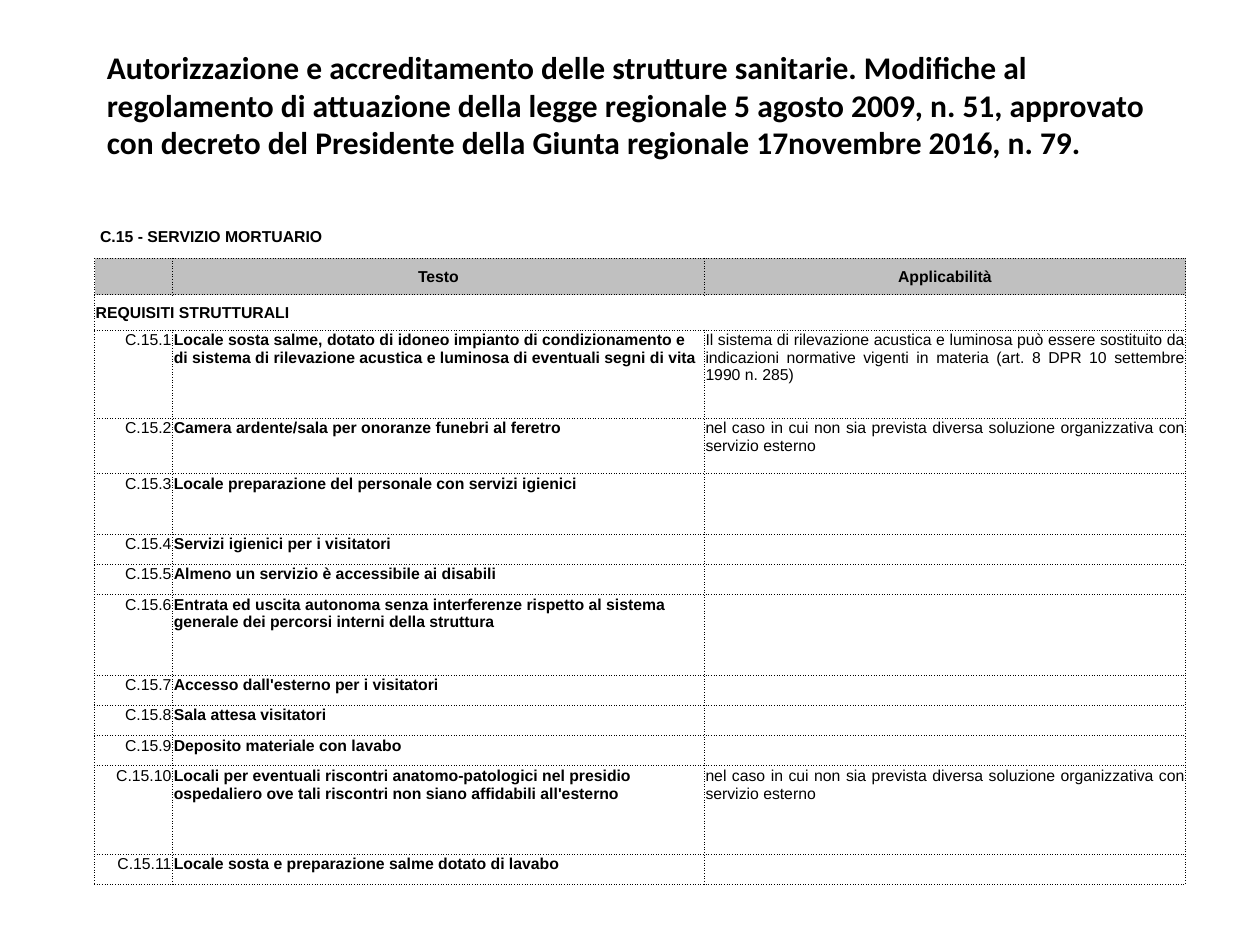
from lxml import etree
from pptx import Presentation
from pptx.dml.color import RGBColor
from pptx.enum.text import MSO_ANCHOR, MSO_AUTO_SIZE, PP_ALIGN
from pptx.oxml.ns import qn
from pptx.util import Inches, Pt

LEFT, CENTER, RIGHT, JUSTIFY = PP_ALIGN.LEFT, PP_ALIGN.CENTER, PP_ALIGN.RIGHT, PP_ALIGN.JUSTIFY
TOP, MIDDLE = MSO_ANCHOR.TOP, MSO_ANCHOR.MIDDLE
GROW = MSO_AUTO_SIZE.SHAPE_TO_FIT_TEXT

TITLE = (
    "Autorizzazione e accreditamento delle strutture sanitarie. Modifiche al "
    "regolamento di attuazione della legge regionale 5 agosto 2009, n. 51, approvato "
    "con decreto del Presidente della Giunta regionale 17novembre 2016, n. 79."
)
EXTERNAL_SERVICE = (
    "nel caso in cui non sia prevista diversa soluzione organizzativa con servizio esterno"
)
REQUIREMENTS = [
    (0.7, "Locale sosta salme, dotato di idoneo impianto di condizionamento e di "
          "sistema di rilevazione acustica e luminosa di eventuali segni di vita",
     "Il sistema di rilevazione acustica e luminosa può essere sostituito da "
     "indicazioni normative vigenti in materia (art. 8 DPR 10 settembre 1990 n. 285)"),
    (0.44, "Camera ardente/sala per onoranze funebri al feretro", EXTERNAL_SERVICE),
    (0.48, "Locale preparazione del personale con servizi igienici", ""),
    (0.24, "Servizi igienici per i visitatori", ""),
    (0.24, "Almeno un servizio è accessibile ai disabili", ""),
    (0.64, "Entrata ed uscita autonoma senza interferenze rispetto al sistema "
           "generale dei percorsi interni della struttura", ""),
    (0.24, "Accesso dall'esterno per i visitatori", ""),
    (0.24, "Sala attesa visitatori", ""),
    (0.24, "Deposito materiale con lavabo", ""),
    (0.7, "Locali per eventuali riscontri anatomo-patologici nel presidio "
          "ospedaliero ove tali riscontri non siano affidabili all'esterno", EXTERNAL_SERVICE),
    (0.24, "Locale sosta e preparazione salme dotato di lavabo", ""),
]
COLUMN_WIDTHS = [0.62, 4.22, 3.82]
HEADING_HEIGHTS = [0.35, 0.29, 0.28]


def color(hex_value):
    return RGBColor.from_string(hex_value)


class SlideBuilder:
    ink = "000000"
    header_fill = "C0C0C0"
    title_font, title_size = "Calibri", 18
    table_font, table_size = "Arial", 9

    def __init__(self, slide):
        self.slide = slide

    def run(self, paragraph, text, font, size, bold):
        run = paragraph.add_run()
        run.text = text
        run.font.name = font
        run.font.size = Pt(size)
        run.font.bold = bold
        run.font.color.rgb = color(self.ink)

    def title(self, text, left, top, width, height):
        box = self.slide.shapes.add_textbox(
            Inches(left), Inches(top), Inches(width), Inches(height))
        box.text_frame.word_wrap = True
        box.text_frame.auto_size = GROW
        self.run(box.text_frame.paragraphs[0], text, self.title_font, self.title_size, True)

    def table(self, left, top, widths, heights):
        frame = self.slide.shapes.add_table(
            len(heights), len(widths), Inches(left), Inches(top),
            Inches(sum(widths)), Inches(sum(heights)))
        table = frame.table
        table.first_row = table.horz_banding = False
        for column, width in zip(table.columns, widths):
            column.width = Inches(width)
        for row, height in zip(table.rows, heights):
            row.height = Inches(height)
        return table

    def borders(self, cell, dotted_sides):
        properties = cell._tc.get_or_add_tcPr()
        for side in "LRTB":
            line = etree.SubElement(properties, qn(f"a:ln{side}"), w=str(Pt(0.5)))
            if side in dotted_sides:
                fill = etree.SubElement(line, qn("a:solidFill"))
                etree.SubElement(fill, qn("a:srgbClr"), val=self.ink)
                etree.SubElement(line, qn("a:prstDash"), val="dot")
            else:
                etree.SubElement(line, qn("a:noFill"))

    def cell(self, cell, text, align=LEFT, bold=True, anchor=TOP, fill=None, sides="LRTB"):
        cell.margin_left = cell.margin_right = cell.margin_top = Inches(0.01)
        cell.margin_bottom = 0
        cell.vertical_anchor = anchor
        self.borders(cell, sides)
        if fill:
            cell.fill.solid()
            cell.fill.fore_color.rgb = color(fill)
        else:
            cell.fill.background()
        paragraph = cell.text_frame.paragraphs[0]
        paragraph.alignment = align
        if text:
            self.run(paragraph, text, self.table_font, self.table_size, bold)
        else:
            etree.SubElement(paragraph._p, qn("a:endParaRPr"), sz=str(self.table_size * 100))

    def band(self, table, row, text, sides="LRTB"):
        last = len(table.columns) - 1
        table.cell(row, 0).merge(table.cell(row, last))
        for column in range(last + 1):
            self.cell(table.cell(row, column), "" if column else text,
                      anchor=MIDDLE, sides=sides)


def main():
    presentation = Presentation()
    presentation.slide_width, presentation.slide_height = Inches(10), Inches(7.5)
    builder = SlideBuilder(presentation.slides.add_slide(presentation.slide_layouts[6]))

    heights = HEADING_HEIGHTS + [height for height, _, _ in REQUIREMENTS]
    requirements = builder.table(0.75, 1.7, COLUMN_WIDTHS, heights)
    builder.band(requirements, 0, "\u00a0C.15 - SERVIZIO MORTUARIO".replace("\u00a0", " "), "B")
    for column, heading in enumerate(["", "Testo", "Applicabilità"]):
        builder.cell(requirements.cell(1, column), heading, CENTER,
                     anchor=MIDDLE, fill=builder.header_fill)
    builder.band(requirements, 2, "REQUISITI STRUTTURALI")
    for number, (_, requirement, applicability) in enumerate(REQUIREMENTS, 1):
        row = number + len(HEADING_HEIGHTS) - 1
        builder.cell(requirements.cell(row, 0), f"C.15.{number}", RIGHT, bold=False)
        builder.cell(requirements.cell(row, 1), requirement)
        builder.cell(requirements.cell(row, 2), applicability, JUSTIFY, bold=False)

    builder.title(TITLE, 0.75, 0.33, 8.67, 1.01)
    presentation.save("out.pptx")


if __name__ == "__main__":
    main()
